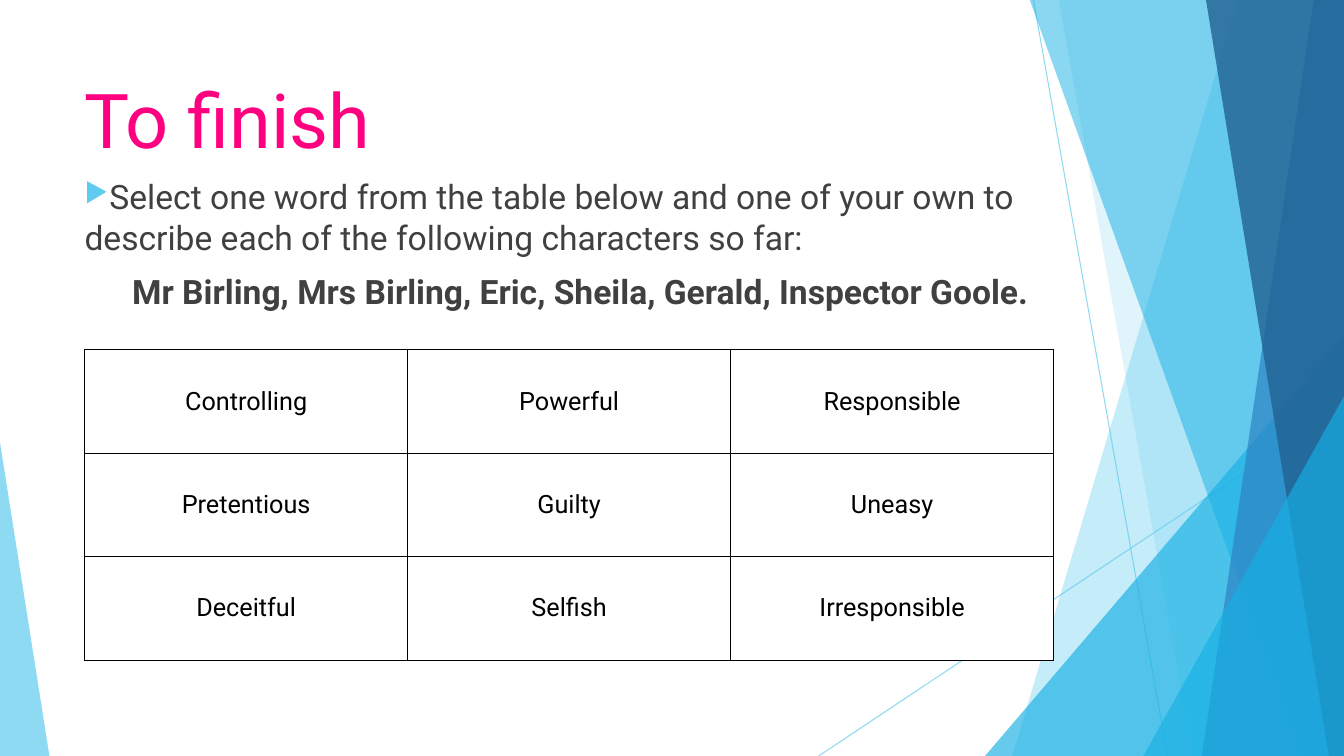
from dataclasses import dataclass

from lxml.etree import SubElement
from pptx import Presentation
from pptx.dml.color import RGBColor
from pptx.enum.shapes import MSO_CONNECTOR as Connector, MSO_SHAPE as Shape
from pptx.enum.text import MSO_ANCHOR as Anchor, PP_ALIGN as Align
from pptx.oxml.ns import qn
from pptx.util import Inches, Pt


@dataclass(frozen=True)
class Theme:
    """Colours, typeface and type sizes of the slide."""
    font: str = "Roboto"
    pink: str = "FF0080"
    grey: str = "404040"
    black: str = "000000"
    white: str = "FFFFFF"
    sky: str = "5FCBEF"
    cyan: str = "17B0E4"
    blue: str = "2E83C3"
    navy: str = "226292"
    title: int = 54
    body: int = 24
    cell: int = 18


class SlideBuilder:
    """Draws styled elements on the current slide."""

    def __init__(self, slide, theme):
        self.slide = slide
        self.theme = theme

    def set_alpha(self, color_format, color, percent):
        color_format.rgb = RGBColor.from_string(color)
        for element in color_format._xFill.iter(qn("a:srgbClr")):
            SubElement(element, qn("a:alpha"), val=str(percent * 1000))

    def paint(self, shape, color, percent):
        shape.shadow.inherit = False
        shape.fill.solid()
        self.set_alpha(shape.fill.fore_color, color, percent)
        shape.line.fill.background()

    def line(self, start, end, color, percent):
        connector = self.slide.shapes.add_connector(
            Connector.STRAIGHT, *map(Inches, start + end))
        connector.line.width = Pt(0.75)
        connector.line.fill.solid()
        self.set_alpha(connector.line.fill.fore_color, color, percent)
        SubElement(connector._element.spPr, qn("a:effectLst"))

    def band(self, top_left, bottom_left, color, percent):
        right, top, bottom = 13.33, -0.01, 7.5
        corners = [(top_left, top), (right, top), (right, bottom), (bottom_left, bottom)]
        points = [(Inches(x), Inches(y)) for x, y in corners]
        builder = self.slide.shapes.build_freeform(*points[0])
        builder.add_line_segments(points[1:], close=True)
        self.paint(builder.convert_to_shape(), color, percent)

    def triangle(self, box, apex, color, percent):
        shape = self.slide.shapes.add_shape(Shape.ISOSCELES_TRIANGLE, *map(Inches, box))
        shape.adjustments[0] = apex
        self.paint(shape, color, percent)

    def style(self, paragraph, size, color, align=Align.LEFT, bold=False, before=0):
        paragraph.alignment = align
        paragraph.space_before = Pt(before)
        font = paragraph.font
        font.name, font.size, font.bold = self.theme.font, Pt(size), bold
        font.color.rgb = RGBColor.from_string(color)

    def text_frame(self, box):
        frame = self.slide.shapes.add_textbox(*map(Inches, box)).text_frame
        frame.word_wrap = True
        return frame

    def bullet(self, paragraph, symbol, color, percent):
        properties = paragraph._p.get_or_add_pPr()
        bullet_color = SubElement(properties, qn("a:buClr"))
        SubElement(bullet_color, qn("a:srgbClr"), val=color)
        SubElement(properties, qn("a:buSzPct"), val=str(percent * 1000))
        SubElement(properties, qn("a:buChar"), char=symbol)

    def border(self, cell, color):
        properties = cell._tc.get_or_add_tcPr()
        for side in ("lnL", "lnR", "lnT", "lnB"):
            edge = SubElement(properties, qn(f"a:{side}"), w=str(Pt(1)))
            fill = SubElement(edge, qn("a:solidFill"))
            SubElement(fill, qn("a:srgbClr"), val=color)

    def table(self, box, rows):
        theme = self.theme
        table = self.slide.shapes.add_table(
            len(rows), len(rows[0]), *map(Inches, box)).table
        table.first_row = table.horz_banding = False
        for cell, word in zip(table.iter_cells(), sum(rows, [])):
            self.border(cell, theme.black)
            cell.fill.solid()
            cell.fill.fore_color.rgb = RGBColor.from_string(theme.white)
            cell.vertical_anchor = Anchor.MIDDLE
            cell.margin_left = cell.margin_right = Inches(0.05)
            cell.margin_top = cell.margin_bottom = Inches(0.05)
            cell.text = word
            self.style(cell.text_frame.paragraphs[0], theme.cell, theme.black, Align.CENTER)


def draw_backdrop(builder):
    theme = builder.theme
    builder.line((10.25, 0), (11.58, 7.5), theme.sky, 70)
    builder.line((13.33, 4.03), (8.12, 7.5), theme.sky, 70)
    builder.band(12.28, 10.04, theme.sky, 36)
    builder.band(10.5, 11.83, theme.sky, 20)
    builder.triangle((9.77, 3.33, 3.56, 4.17), 1, theme.cyan, 66)
    builder.band(10.21, 12.91, theme.cyan, 50)
    builder.band(13.03, 11.92, theme.blue, 70)
    builder.band(11.96, 13.18, theme.navy, 80)
    builder.triangle((11.34, 3.93, 1.99, 3.57), 1, theme.cyan, 66)
    builder.triangle((0, 4.39, 0.49, 3.11), 0, theme.sky, 70)


def draw_content(builder):
    theme = builder.theme
    title = builder.text_frame((0.74, 0.67, 9.4, 1.44)).paragraphs[0]
    title.text = "To finish"
    builder.style(title, theme.title, theme.pink)

    body = builder.text_frame((0.74, 1.7, 10.03, 4.24))
    task = body.paragraphs[0]
    task.text = ("Select one word from the table below and one of your own "
                 "to describe each of the following characters so far:")
    builder.bullet(task, "▶", theme.sky, 80)
    builder.style(task, theme.body, theme.grey, before=10)
    characters = body.add_paragraph()
    characters.text = "Mr Birling, Mrs Birling, Eric, Sheila, Gerald, Inspector Goole."
    builder.style(characters, theme.body, theme.grey, Align.CENTER, bold=True, before=10)

    builder.table((0.84, 3.47, 9.61, 3.08), [
        ["Controlling", "Powerful", "Responsible"],
        ["Pretentious", "Guilty", "Uneasy"],
        ["Deceitful", "Selfish", "Irresponsible"],
    ])


def main():
    presentation = Presentation()
    presentation.slide_width = Inches(13.33)
    presentation.slide_height = Inches(7.5)
    slide = presentation.slides.add_slide(presentation.slide_layouts[6])
    builder = SlideBuilder(slide, Theme())
    draw_backdrop(builder)
    draw_content(builder)
    presentation.save("out.pptx")


if __name__ == "__main__":
    main()
